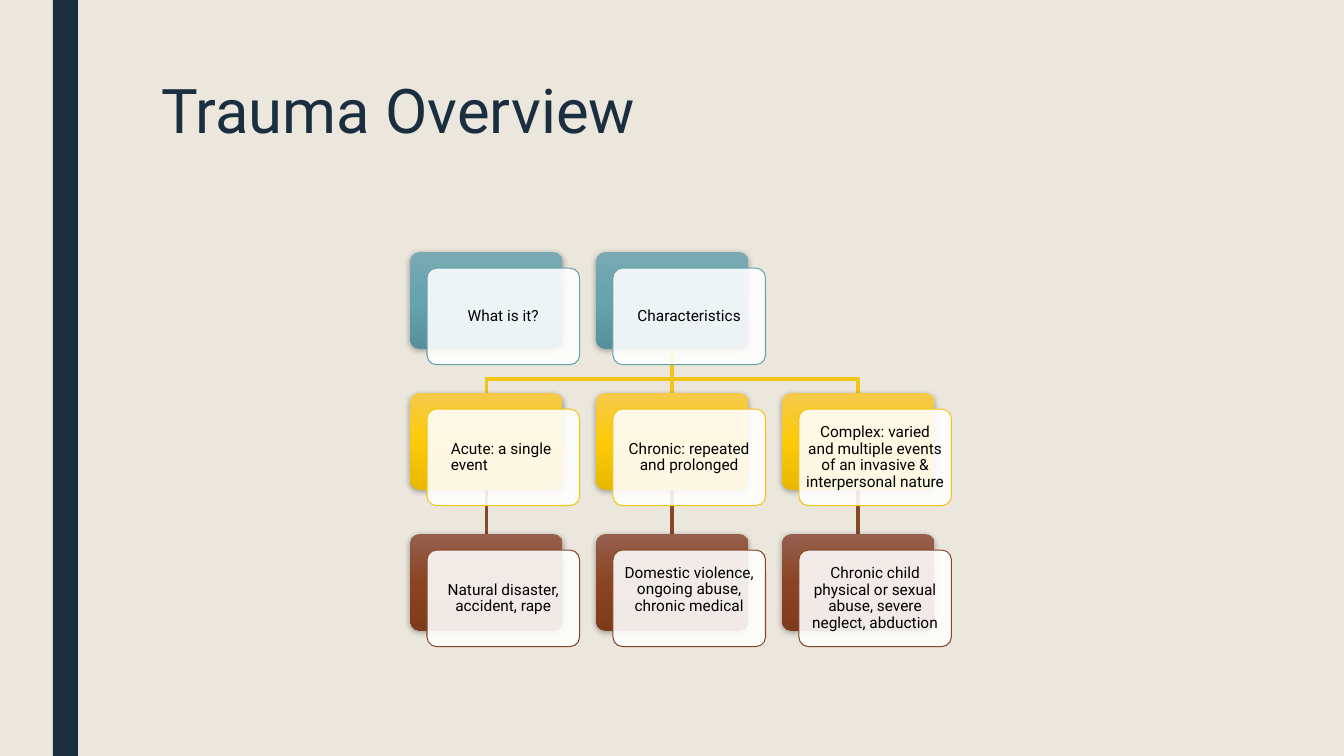
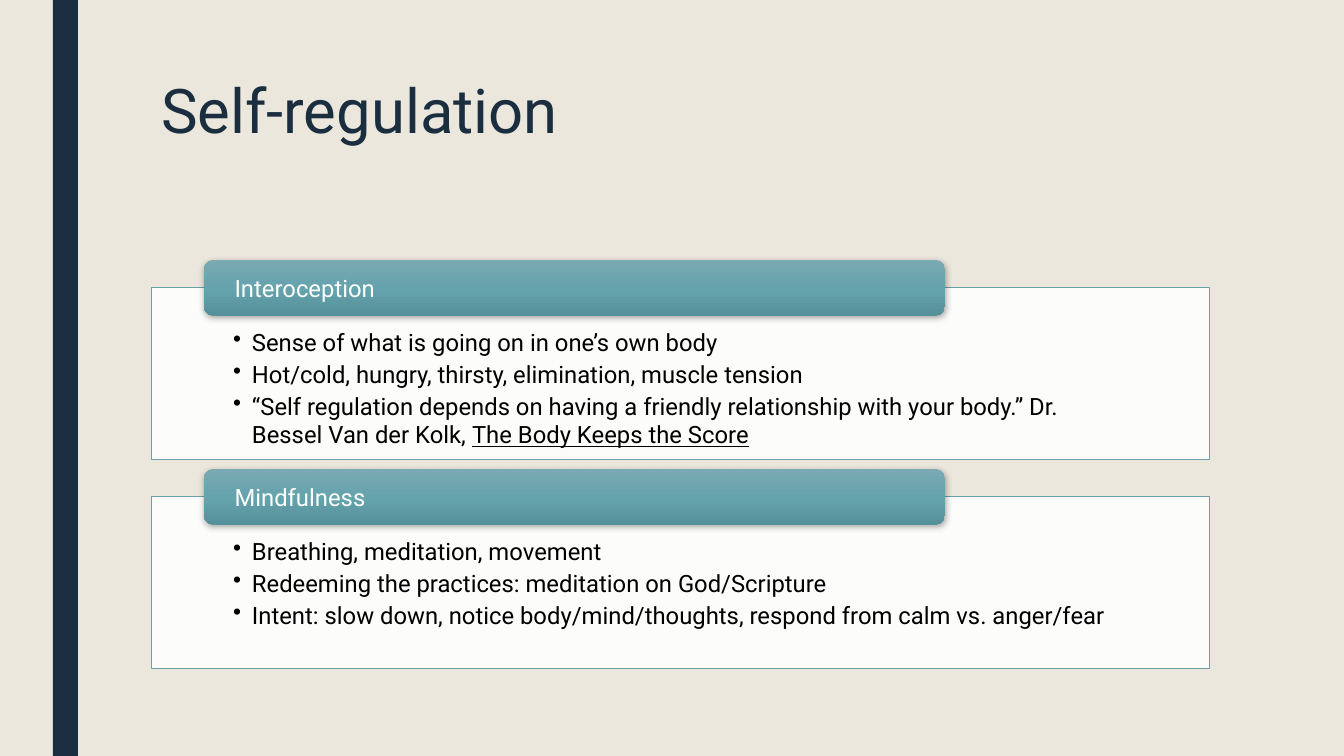
from lxml.etree import SubElement
from pptx import Presentation
from pptx.dml.color import RGBColor
from pptx.enum.shapes import MSO_CONNECTOR as Connector, MSO_SHAPE as Shape
from pptx.enum.text import MSO_ANCHOR as Anchor, PP_ALIGN as Align
from pptx.oxml.ns import qn
from pptx.util import Pt

FONT = "Roboto"
NAVY, CREAM, WHITE, BLACK = "1A2E40", "EBE7DD", "FFFFFF", "000000"
TEAL, GOLD, BROWN = "69A1AB", "F2C415", "874729"
GRADIENTS = {
    TEAL: ("7BAAB3", "65A3AD", "56919B"),
    GOLD: ("F5CA4B", "FDCA09", "E8B800"),
    BROWN: ("95604E", "8B4423", "7E3B1A"),
}

SLIDE_W, SLIDE_H = 960, 540
CARD_LEFT, CARD_TOP, CARD_W, CARD_H = 293, 180, 109, 69
COLUMN_PITCH, ROW_PITCH = 132.8, 100.7
LABEL_DX, LABEL_DY = 12, 11.5
BRANCH_Y = 270.7

CARD_ROWS = [
    (TEAL, ["What is it?", "Characteristics"]),
    (GOLD, ["Acute: a single event", "Chronic: repeated and prolonged",
            "Complex: varied and multiple events of an invasive & interpersonal nature"]),
    (BROWN, ["Natural disaster, accident, rape",
             "Domestic violence, ongoing abuse, chronic medical",
             "Chronic child physical or sexual abuse, severe neglect, abduction"]),
]
# Cards whose text sits off centre, by row and column
LABEL_OPTIONS = {
    (1, 0): {"align": Align.LEFT, "left": 15},
    (2, 1): {"bottom": 15},
}

# Each bullet is a list of (text, underlined) pieces
TOPICS = [
    ("Interoception", [
        [("Sense of what is going on in one’s own body", False)],
        [("Hot/cold, hungry, thirsty, elimination, muscle tension", False)],
        [("“Self regulation depends on having a friendly relationship with your body.” "
          "Dr. Bessel Van der Kolk, ", False), ("The Body Keeps the Score", True)],
    ]),
    ("Mindfulness", [
        [("Breathing, meditation, movement", False)],
        [("Redeeming the practices: meditation on God/Scripture", False)],
        [("Intent: slow down, notice body/mind/thoughts, respond from calm vs. anger/fear",
          False)],
    ]),
]


def rgb(color):
    return RGBColor.from_string(color)


def set_font(paragraph, size, color):
    font = paragraph.font
    font.name, font.size = FONT, Pt(size)
    font.color.rgb = rgb(color)


def set_frame(frame, left, top, right, bottom, anchor=Anchor.TOP):
    frame.word_wrap = True
    frame.vertical_anchor = anchor
    frame.margin_left, frame.margin_top = Pt(left), Pt(top)
    frame.margin_right, frame.margin_bottom = Pt(right), Pt(bottom)


def add_box(slide, kind, left, top, width, height, radius=None):
    box = slide.shapes.add_shape(kind, Pt(left), Pt(top), Pt(width), Pt(height))
    box.shadow.inherit = False
    box.line.fill.background()
    if radius is not None:
        box.adjustments[0] = radius
    return box


def fill_solid(box, color):
    box.fill.solid()
    box.fill.fore_color.rgb = rgb(color)


def make_pane(box, outline):
    """Translucent white fill with a thin outline."""
    fill_solid(box, WHITE)
    color = box.fill._xPr.find(qn("a:solidFill"))[0]
    SubElement(color, qn("a:alpha"), val="89000")
    box.line.color.rgb = rgb(outline)
    box.line.width = Pt(0.75)


def make_glossy(box, theme):
    """Three-stop vertical gradient with a soft shadow below."""
    box.fill.gradient()
    box.fill.gradient_angle = 270
    properties = box._element.spPr
    stops = properties.find(qn("a:gradFill")).find(qn("a:gsLst"))
    for stop in list(stops):
        stops.remove(stop)
    for position, color in zip((0, 50000, 100000), GRADIENTS[theme]):
        stop = SubElement(stops, qn("a:gs"), pos=str(position))
        SubElement(stop, qn("a:srgbClr"), val=color)
    shadow = SubElement(properties.find(qn("a:effectLst")), qn("a:outerShdw"),
                        blurRad=str(Pt(4.5)), dist=str(Pt(1.5)), dir="5400000",
                        algn="ctr", rotWithShape="0")
    shadow_color = SubElement(shadow, qn("a:srgbClr"), val=BLACK)
    SubElement(shadow_color, qn("a:alpha"), val="35000")


def add_titled_slide(prs, title):
    slide = prs.slides.add_slide(prs.slide_layouts[6])
    fill_solid(add_box(slide, Shape.RECTANGLE, 37.7, 0, 18, SLIDE_H), NAVY)
    frame = slide.shapes.add_textbox(Pt(108), Pt(54), Pt(756), Pt(117)).text_frame
    set_frame(frame, 7.2, 3.6, 7.2, 3.6)
    heading = frame.paragraphs[0]
    heading.text = title
    heading.line_spacing = 0.89
    set_font(heading, 44, NAVY)
    return slide


def card_position(row, column):
    return CARD_LEFT + COLUMN_PITCH * column, CARD_TOP + ROW_PITCH * row


def add_link(slide, row, column, color):
    """Vertical line from a card down to the one in the next row."""
    left, top = card_position(row, column)
    x = Pt(left + CARD_W / 2)
    link = slide.shapes.add_connector(Connector.STRAIGHT, x, Pt(top + CARD_H),
                                      x, Pt(top + ROW_PITCH))
    link.line.color.rgb = rgb(color)
    link.line.width = Pt(2.75)
    SubElement(link._element.spPr, qn("a:effectLst"))
    return link


def add_branch(slide, color):
    """Bracket that leads to the outer cards of the second row."""
    left, top = card_position(1, 0)
    first = left + CARD_W / 2
    last = first + 2 * COLUMN_PITCH
    builder = slide.shapes.build_freeform(Pt(first), Pt(top))
    builder.add_line_segments([(Pt(first), Pt(BRANCH_Y)), (Pt(last), Pt(BRANCH_Y)),
                               (Pt(last), Pt(top))], close=False)
    branch = builder.convert_to_shape()
    branch.shadow.inherit = False
    branch.fill.background()
    branch.line.color.rgb = rgb(color)
    branch.line.width = Pt(2.75)


def add_card(slide, row, column, theme, text, align=Align.CENTER, left=3, bottom=3):
    x, y = card_position(row, column)
    back = add_box(slide, Shape.ROUNDED_RECTANGLE, x, y, CARD_W, CARD_H, 0.1)
    make_glossy(back, theme)
    label = add_box(slide, Shape.ROUNDED_RECTANGLE, x + LABEL_DX, y + LABEL_DY,
                    CARD_W, CARD_H, 0.1)
    make_pane(label, theme)
    set_frame(label.text_frame, left, 3, 3, bottom, Anchor.MIDDLE)
    paragraph = label.text_frame.paragraphs[0]
    paragraph.text = text
    paragraph.alignment = align
    paragraph.line_spacing = 0.9
    set_font(paragraph, 11, BLACK)
    return back


def add_bullet(paragraph, pieces):
    for text, underlined in pieces:
        run = paragraph.add_run()
        run.text = text
        if underlined:
            run.font.underline = True
    paragraph.alignment = Align.LEFT
    properties = paragraph._p.get_or_add_pPr()
    properties.set("marL", str(Pt(13.5)))
    properties.set("indent", str(-Pt(13.5)))
    bullet_color = SubElement(properties, qn("a:buClr"))
    SubElement(bullet_color, qn("a:srgbClr"), val=BLACK)
    SubElement(properties, qn("a:buChar"), char="•")
    set_font(paragraph, 17, BLACK)


def add_topic(slide, top, heading, bullets):
    panel = add_box(slide, Shape.RECTANGLE, 108, top, 756, 122.4)
    make_pane(panel, TEAL)
    frame = panel.text_frame
    set_frame(frame, 58.5, 28.2, 58.5, 9.3)
    for index, pieces in enumerate(bullets):
        paragraph = frame.add_paragraph() if index else frame.paragraphs[0]
        if index:
            paragraph.space_before = Pt(2.5)
        add_bullet(paragraph, pieces)

    tab = add_box(slide, Shape.ROUNDED_RECTANGLE, 145.6, top - 20, 529.4, 39.8, 0.17)
    make_glossy(tab, TEAL)
    set_frame(tab.text_frame, 20, 2, 20, 2, Anchor.MIDDLE)
    paragraph = tab.text_frame.paragraphs[0]
    paragraph.text = heading
    paragraph.alignment = Align.LEFT
    set_font(paragraph, 17, WHITE)


def build_trauma_overview(prs):
    slide = add_titled_slide(prs, "Trauma Overview")
    add_branch(slide, GOLD)
    links = {(0, 1): add_link(slide, 0, 1, GOLD)}
    for column in range(3):
        links[1, column] = add_link(slide, 1, column, BROWN)

    cards = {}
    for row, (theme, texts) in enumerate(CARD_ROWS):
        for column, text in enumerate(texts):
            options = LABEL_OPTIONS.get((row, column), {})
            cards[row, column] = add_card(slide, row, column, theme, text, **options)

    for (row, column), link in links.items():
        link.begin_connect(cards[row, column], 2)
        link.end_connect(cards[row + 1, column], 0)


def build_self_regulation(prs):
    slide = add_titled_slide(prs, "Self-regulation")
    for index, (heading, bullets) in enumerate(TOPICS):
        add_topic(slide, 205.6 + 149.3 * index, heading, bullets)


def main():
    prs = Presentation()
    prs.slide_width, prs.slide_height = Pt(SLIDE_W), Pt(SLIDE_H)
    fill_solid(prs.slide_master.background, CREAM)
    build_trauma_overview(prs)
    build_self_regulation(prs)
    prs.save("out.pptx")


if __name__ == "__main__":
    main()
